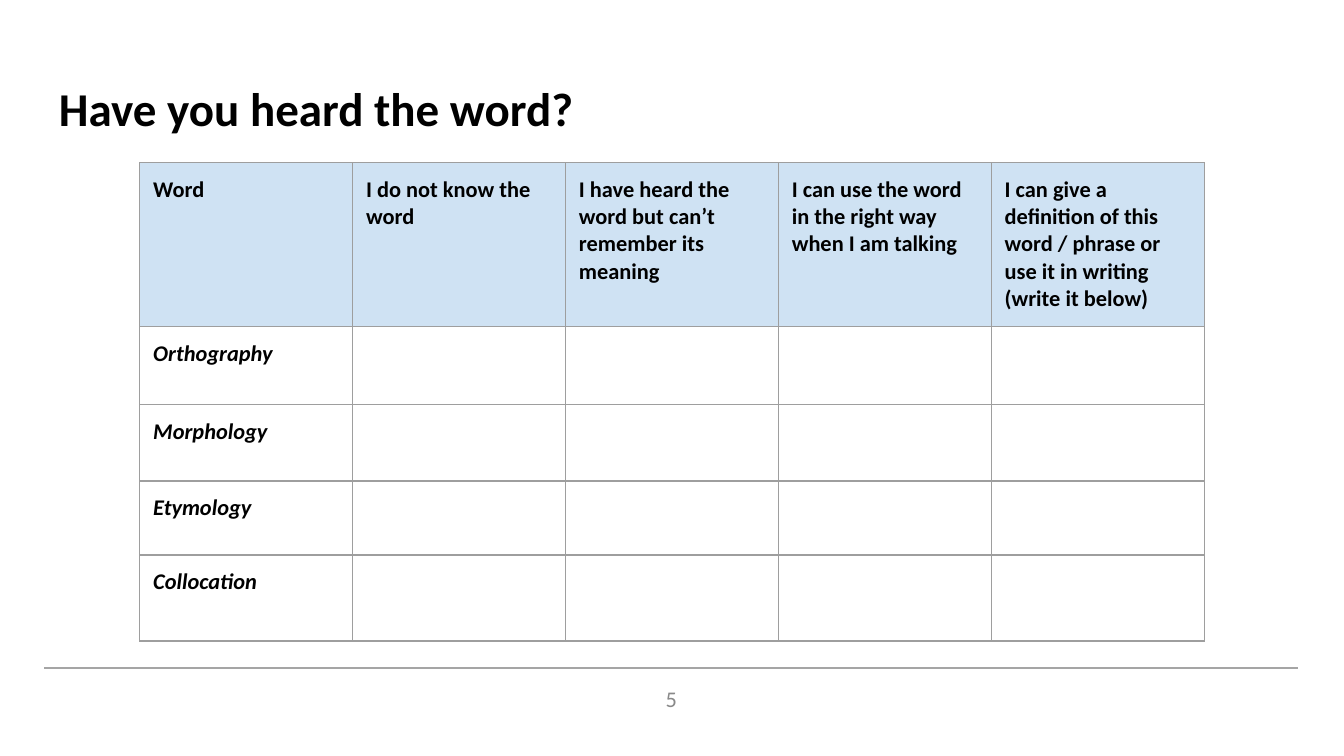
import lxml.etree
import pptx
import pptx.dml.color
import pptx.enum.shapes
import pptx.enum.text
import pptx.oxml.ns
import pptx.util

Inches = pptx.util.Inches
Pt = pptx.util.Pt
RGBColor = pptx.dml.color.RGBColor
qn = pptx.oxml.ns.qn

BLACK = RGBColor(0x00, 0x00, 0x00)
NUMBER_GRAY = RGBColor(0x89, 0x89, 0x89)
RULE_GRAY = RGBColor(0xA5, 0xA5, 0xA5)
BORDER_GRAY = RGBColor(0x9E, 0x9E, 0x9E)
HEADER_BLUE = RGBColor(0xCF, 0xE2, 0xF3)

HEADINGS = [
    "Word",
    "I do not know the word",
    "I have heard the word but can’t remember its meaning",
    "I can use the word in the right way when I am talking",
    "I can give a definition of this word / phrase or use it in writing (write it below)",
]
WORDS = ["Orthography", "Morphology", "Etymology", "Collocation"]
TABLE_WIDTH = 7.92
ROW_HEIGHTS = [1.22, 0.58, 0.57, 0.55, 0.64]


def write(frame, text, size, color, bold=False, italic=False):
    run = frame.paragraphs[0].add_run()
    run.text = text
    run.font.name = "Calibri"
    run.font.size = Pt(size)
    run.font.color.rgb = color
    run.font.bold = bold
    run.font.italic = italic


def add_borders(cell):
    """Draw a thin gray line on all four sides; call before setting the fill."""
    properties = cell._tc.get_or_add_tcPr()
    for side in ("a:lnL", "a:lnR", "a:lnT", "a:lnB"):
        border = lxml.etree.SubElement(properties, qn(side), w=str(Pt(0.75)))
        fill = lxml.etree.SubElement(border, qn("a:solidFill"))
        lxml.etree.SubElement(fill, qn("a:srgbClr"), val=str(BORDER_GRAY))


# 16:9 slide
presentation = pptx.Presentation()
presentation.slide_width = Inches(10)
presentation.slide_height = Inches(10 * 9 / 16)
slide = presentation.slides.add_slide(presentation.slide_layouts[6])

# Footer
footer_rule = slide.shapes.add_connector(
    pptx.enum.shapes.MSO_CONNECTOR.STRAIGHT,
    Inches(0.33), Inches(4.97), Inches(9.66), Inches(4.97))
footer_rule.line.color.rgb = RULE_GRAY
footer_rule.line.width = Pt(0.75)
lxml.etree.SubElement(footer_rule._element.spPr, qn("a:effectLst"))

page_number = slide.shapes.add_textbox(
    Inches(3.83), Inches(5), Inches(2.33), Inches(0.4)).text_frame
page_number.word_wrap = True
page_number.vertical_anchor = pptx.enum.text.MSO_ANCHOR.MIDDLE
page_number.paragraphs[0].alignment = pptx.enum.text.PP_ALIGN.CENTER
write(page_number, "5", 12, NUMBER_GRAY)

# Title
title = slide.shapes.add_textbox(
    Inches(0.34), Inches(0.49), Inches(9.32), Inches(0.63)).text_frame
title.word_wrap = True
title.margin_top = title.margin_bottom = Inches(0.1)
write(title, "Have you heard the word?", 25.2, BLACK, bold=True)

# Vocabulary check table
vocabulary = slide.shapes.add_table(
    len(ROW_HEIGHTS), len(HEADINGS), Inches(1.04), Inches(1.21),
    Inches(TABLE_WIDTH), Inches(sum(ROW_HEIGHTS))).table
vocabulary.first_row = False
vocabulary.horz_banding = False
for row, height in zip(vocabulary.rows, ROW_HEIGHTS):
    row.height = Inches(height)

for cell in vocabulary.iter_cells():
    cell.margin_left = cell.margin_right = Inches(0.1)
    cell.margin_top = cell.margin_bottom = Inches(0.1)
    add_borders(cell)
    cell.fill.background()

for column_index, heading in enumerate(HEADINGS):
    cell = vocabulary.cell(0, column_index)
    cell.fill.solid()
    cell.fill.fore_color.rgb = HEADER_BLUE
    write(cell.text_frame, heading, 12, BLACK, bold=True)

for row_index, word in enumerate(WORDS, start=1):
    write(vocabulary.cell(row_index, 0).text_frame, word, 12, BLACK, bold=True, italic=True)

presentation.save("out.pptx")
